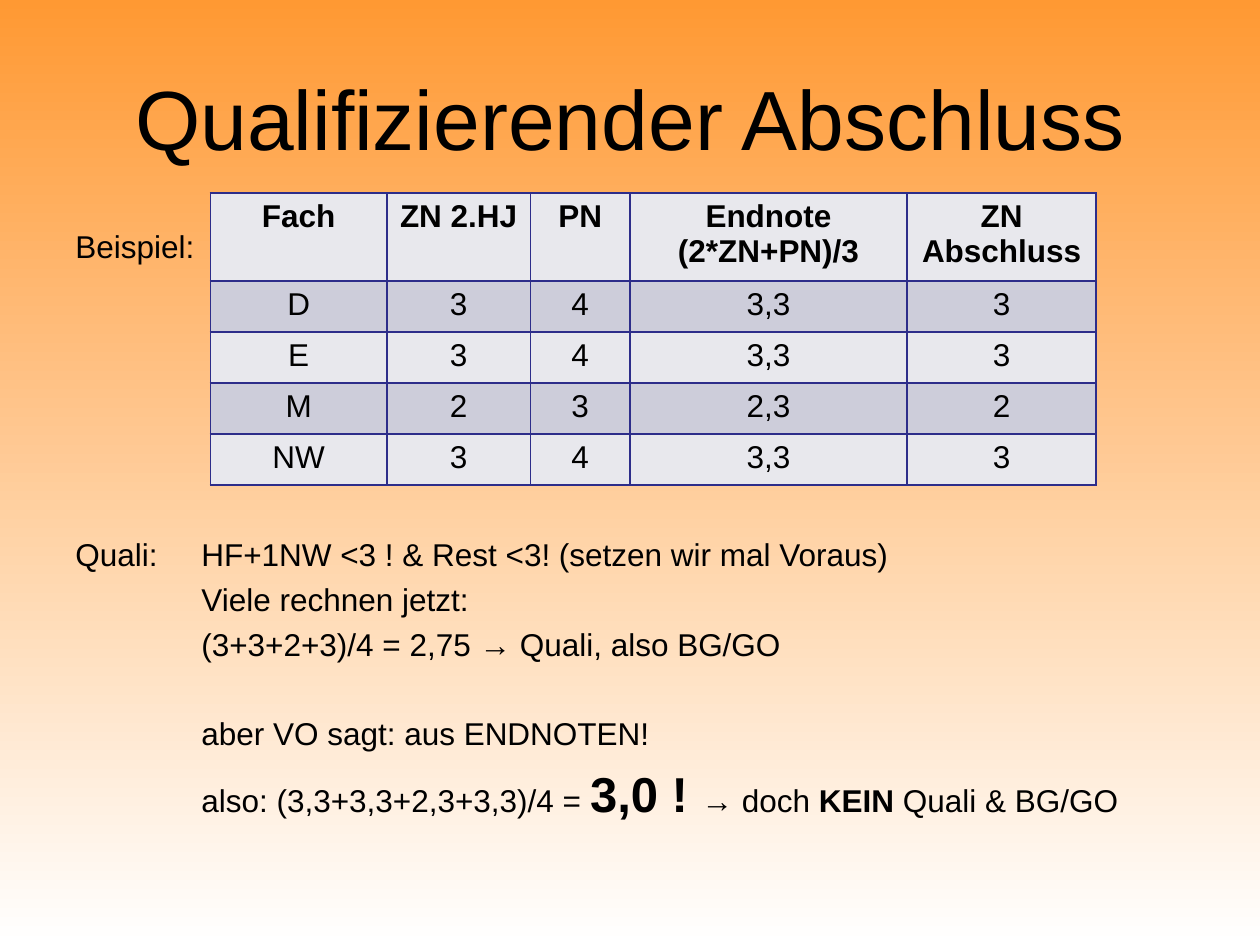
import dataclasses
import pptx
import pptx.util
import pptx.dml.color
import pptx.enum.text
import pptx.oxml
import pptx.oxml.ns

Inches = pptx.util.Inches
Pt = pptx.util.Pt
Align = pptx.enum.text.PP_ALIGN
Anchor = pptx.enum.text.MSO_ANCHOR


@dataclasses.dataclass
class Theme:
    font: str = "Arial"
    ink: str = "000000"
    top: str = "FF9933"
    base: str = "FFFFFF"
    light: str = "E8E8ED"
    dark: str = "CDCDDA"
    line: str = "2D2D8A"
    title: int = 48
    body: int = 18
    large: int = 28
    space: float = 0.23


def color(code):
    return pptx.dml.color.RGBColor.from_string(code)


class Deck:
    def __init__(self, show, theme):
        self.theme = theme
        self.slide = show.slides.add_slide(show.slide_layouts[5])

    def style(self, run, size, bold=False):
        run.font.name = self.theme.font
        run.font.size = Pt(size)
        run.font.bold = bold
        run.font.color.rgb = color(self.theme.ink)

    def back(self):
        fill = self.slide.background.fill
        fill.gradient()
        fill.gradient_angle = 270
        for stop, code in zip(fill.gradient_stops, (self.theme.top, self.theme.base)):
            stop.color.rgb = color(code)
        fill.gradient_stops[0].position = 0
        fill.gradient_stops[1].position = 1

    def title(self, text, left, top, width, height):
        shape = self.slide.shapes.title
        shape.left, shape.top = Inches(left), Inches(top)
        shape.width, shape.height = Inches(width), Inches(height)
        frame = shape.text_frame
        frame.text = text
        frame.vertical_anchor = Anchor.MIDDLE
        para = frame.paragraphs[0]
        para.alignment = Align.CENTER
        self.style(para.runs[0], self.theme.title)

    def text(self, lines, left, top, width, height, indent=0):
        box = self.slide.shapes.add_textbox(
            Inches(left), Inches(top), Inches(width), Inches(height))
        frame = box.text_frame
        frame.word_wrap = True
        for index, (parts, gap) in enumerate(lines):
            para = frame.paragraphs[0] if index == 0 else frame.add_paragraph()
            size = max(part[1] for part in parts)
            para.space_before = Pt(round(size * self.theme.space + gap, 1))
            props = para._p.get_or_add_pPr()
            props.set("marL", str(Inches(indent)))
            hang = indent if "\t" in parts[0][0] else 0
            props.set("indent", str(-Inches(hang)))
            for words, size, bold in parts:
                run = para.add_run()
                run.text = words
                self.style(run, size, bold)

    def border(self, cell):
        props = cell._tc.get_or_add_tcPr()
        for side in ("lnL", "lnR", "lnT", "lnB"):
            props.append(pptx.oxml.parse_xml(
                f'<a:{side} {pptx.oxml.ns.nsdecls("a")} w="{Pt(1)}">'
                f'<a:solidFill><a:srgbClr val="{self.theme.line}"/></a:solidFill>'
                f'</a:{side}>'))

    def table(self, rows, left, top, widths, heights):
        table = self.slide.shapes.add_table(
            len(rows), len(widths), Inches(left), Inches(top),
            Inches(sum(widths)), Inches(sum(heights))).table
        for column, width in zip(table.columns, widths):
            column.width = Inches(width)
        for index, (row, height) in enumerate(zip(rows, heights)):
            table.rows[index].height = Inches(height)
            for spot, words in enumerate(row):
                cell = table.cell(index, spot)
                self.border(cell)
                cell.fill.solid()
                cell.fill.fore_color.rgb = color(
                    self.theme.dark if index % 2 else self.theme.light)
                cell.text_frame.text = words
                for para in cell.text_frame.paragraphs:
                    para.alignment = Align.CENTER
                    for run in para.runs:
                        self.style(run, self.theme.body, index == 0)


def main():
    show = pptx.Presentation()
    show.slide_width, show.slide_height = Inches(10), Inches(7.5)
    theme = Theme()
    deck = Deck(show, theme)
    deck.back()
    deck.title("Qualifizierender Abschluss", 0.5, 0.3, 9, 1.25)

    def plain(words, gap=0):
        return [(words, theme.body, False)], gap

    deck.text([plain("Beispiel:")], 0.5, 1.75, 1.2, 0.45)
    deck.text([
        plain("Quali: \tHF+1NW <3 ! & Rest <3! (setzen wir mal Voraus)"),
        plain("Viele rechnen jetzt:"),
        plain("(3+3+2+3)/4 = 2,75 → Quali, also BG/GO"),
        plain("aber VO sagt: aus ENDNOTEN!", 25),
        ([("also: (3,3+3,3+2,3+3,3)/4 = ", theme.body, False),
          ("3,0 ! ", theme.large, True),
          ("→ doch ", theme.body, False),
          ("KEIN ", theme.body, True),
          ("Quali & BG/GO", theme.body, False)], 0),
    ], 0.5, 4.2, 9, 2.5, indent=1)
    deck.table([
        ("Fach", "ZN 2.HJ", "PN", "Endnote\n(2*ZN+PN)/3", "ZN Abschluss"),
        ("D", "3", "4", "3,3", "3"),
        ("E", "3", "4", "3,3", "3"),
        ("M", "2", "3", "2,3", "2"),
        ("NW", "3", "4", "3,3", "3"),
    ], 1.67, 1.53, (1.4, 1.14, 0.79, 2.2, 1.5), [0.7] + [0.405] * 4)
    show.save("out.pptx")


if __name__ == "__main__":
    main()
